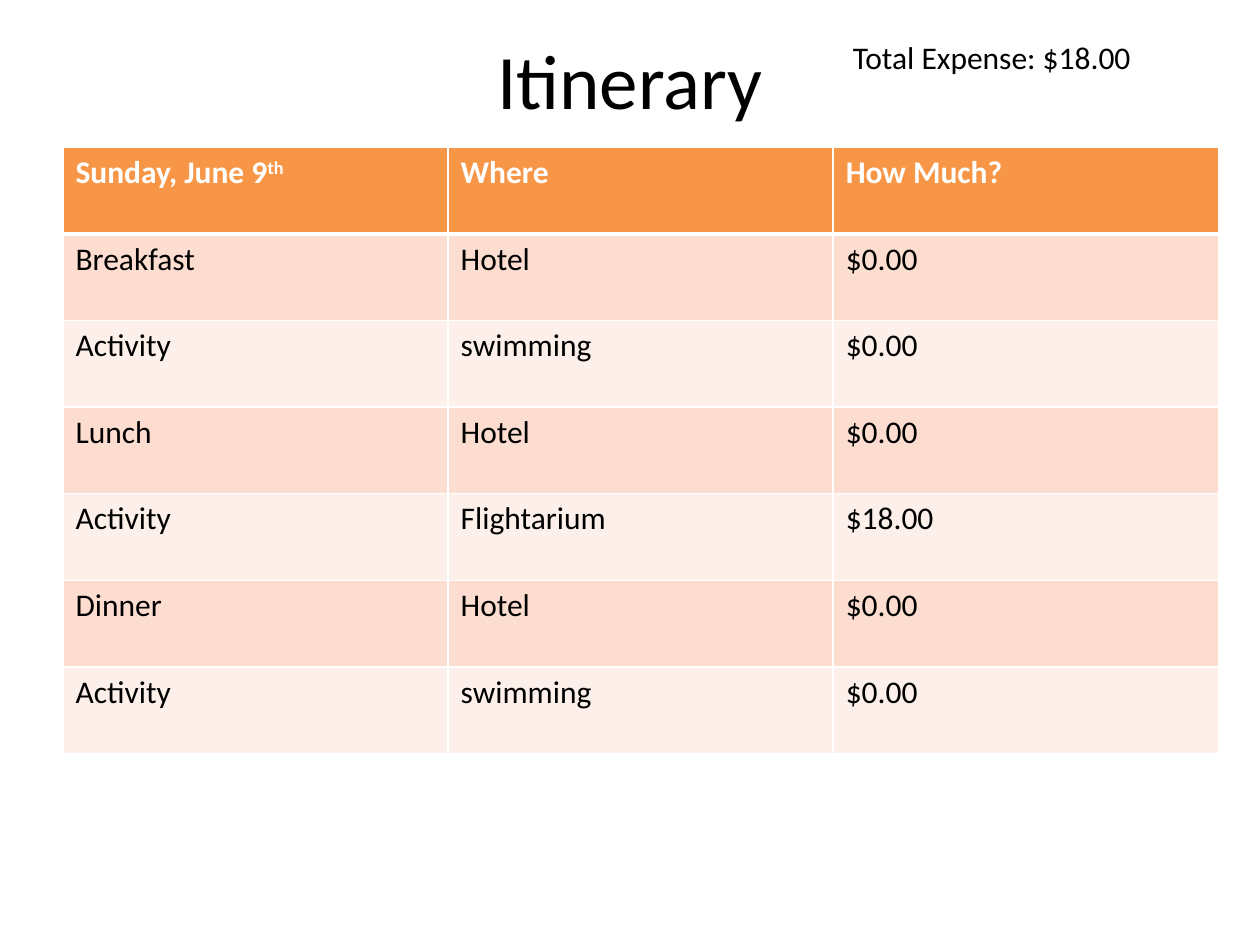
"""Build the one-day itinerary slide with its expense table."""
from lxml import etree
from pptx import Presentation
from pptx.dml.color import RGBColor
from pptx.enum.text import MSO_ANCHOR, PP_ALIGN
from pptx.oxml.ns import qn
from pptx.util import Inches, Pt

CENTER, LEFT = PP_ALIGN.CENTER, PP_ALIGN.LEFT
MIDDLE, TOP = MSO_ANCHOR.MIDDLE, MSO_ANCHOR.TOP

TITLE = "Itinerary"
TOTAL = "Total Expense: $18.00"
HEADER = [("Sunday, June 9", "th"), ("Where", ""), ("How Much?", "")]
ROWS = [
    ("Breakfast", "Hotel", "$0.00"),
    ("Activity", "swimming", "$0.00"),
    ("Lunch", "Hotel", "$0.00"),
    ("Activity", "Flightarium", "$18.00"),
    ("Dinner", "Hotel", "$0.00"),
    ("Activity", "swimming", "$0.00"),
]
THEME = {
    "font": "Calibri",
    "title_size": 44,
    "body_size": 18,
    "text": "000000",
    "header_text": "FFFFFF",
    "header_fill": "F79646",
    "bands": ("FCDDCF", "FDEFE9"),
    "border": "FFFFFF",
    "line": 1,
    "header_line": 3,
}


def write(p, text, size, color, bold=False, superscript=""):
    p.font.name = THEME["font"]
    p.font.size = Pt(size)
    p.font.bold = bold
    p.font.color.rgb = RGBColor.from_string(color)
    p.add_run().text = text
    if superscript:
        r = p.add_run()
        r.text = superscript
        r.font._element.set("baseline", "30000")


def add_text(slide, box, text, size, align=LEFT, anchor=TOP):
    tf = slide.shapes.add_textbox(*map(Inches, box)).text_frame
    tf.word_wrap = True
    tf.vertical_anchor = anchor
    tf.paragraphs[0].alignment = align
    write(tf.paragraphs[0], text, size, THEME["text"])


def set_borders(cell, top, bottom):
    tc_pr = cell._tc.get_or_add_tcPr()
    sides = {"a:lnL": THEME["line"], "a:lnR": THEME["line"], "a:lnT": top, "a:lnB": bottom}
    for i, (tag, width) in enumerate(sides.items()):
        ln = etree.Element(qn(tag), w=str(Pt(width)))
        fill = etree.SubElement(ln, qn("a:solidFill"))
        etree.SubElement(fill, qn("a:srgbClr"), val=THEME["border"])
        tc_pr.insert(i, ln)


def add_itinerary(slide):
    grid = [HEADER] + [[(text, "") for text in row] for row in ROWS]
    box = map(Inches, (0.5, 1.17, 9.17, 4.81))
    table = slide.shapes.add_table(len(grid), len(HEADER), *box).table
    for i, row in enumerate(grid):
        header = i == 0
        fill = THEME["header_fill"] if header else THEME["bands"][(i - 1) % 2]
        color = THEME["header_text"] if header else THEME["text"]
        top = THEME["header_line"] if i == 1 else THEME["line"]
        bottom = THEME["header_line"] if header else THEME["line"]
        for j, (text, superscript) in enumerate(row):
            cell = table.cell(i, j)
            cell.fill.solid()
            cell.fill.fore_color.rgb = RGBColor.from_string(fill)
            set_borders(cell, top, bottom)
            p = cell.text_frame.paragraphs[0]
            write(p, text, THEME["body_size"], color, header, superscript)


def main():
    prs = Presentation()
    prs.slide_width, prs.slide_height = Inches(10), Inches(7.5)
    slide = prs.slides.add_slide(prs.slide_layouts[6])
    add_text(slide, (0.5, 0, 9, 1.25), TITLE, THEME["title_size"], CENTER, MIDDLE)
    add_text(slide, (6.67, 0.25, 3.08, 0.4), TOTAL, THEME["body_size"])
    add_itinerary(slide)
    prs.save("out.pptx")


if __name__ == "__main__":
    main()
